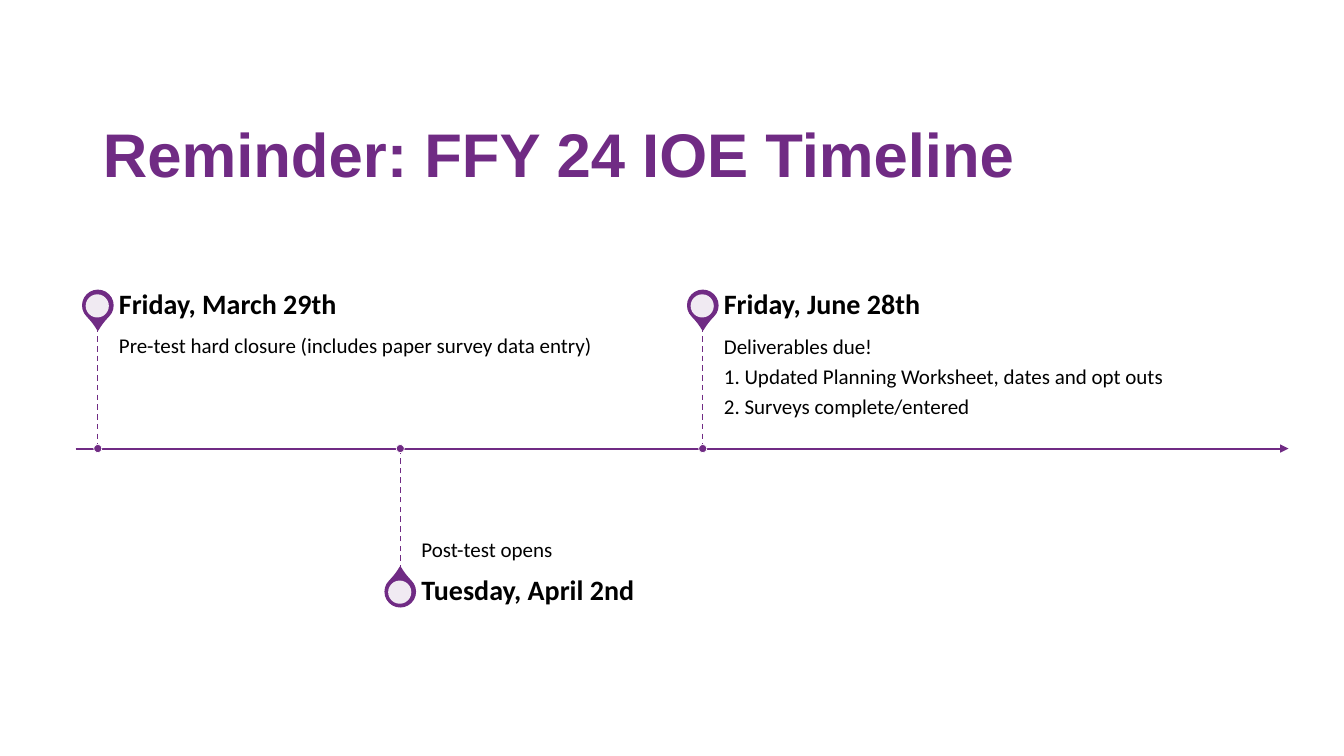
from lxml.etree import SubElement
from pptx import Presentation
from pptx.dml.color import RGBColor
from pptx.enum.dml import MSO_LINE
from pptx.enum.shapes import MSO_CONNECTOR, MSO_SHAPE
from pptx.enum.text import MSO_ANCHOR, PP_ALIGN
from pptx.oxml.ns import qn
from pptx.util import Emu, Pt

EMU_PER_PX = 9144
COLORS = {"purple": "702B84", "white": "FFFFFF", "black": "000000"}
HEADING_HEIGHT = 42
BODY_HEIGHT = 121
TEXT_WIDTH = 500
EVENTS = [
    ("Friday, March 29th", ["Pre-test hard closure (includes paper survey data entry)"], True),
    ("Tuesday, April 2nd", ["Post-test opens"], False),
    ("Friday, June 28th", [
        "Deliverables due!",
        "1. Updated Planning Worksheet, dates and opt outs",
        "2. Surveys complete/entered",
    ], True),
]


def px(*lengths):
    return [Emu(length * EMU_PER_PX) for length in lengths]


def color(name):
    return RGBColor.from_string(COLORS[name])


def add_run(paragraph, text, font_name, size, color_name, bold):
    run = paragraph.add_run()
    run.text = text
    run.font.name = font_name
    run.font.size = Pt(size)
    run.font.bold = bold
    run.font.color.rgb = color(color_name)


def add_text(slide, box, lines, size, bold, anchor, insets):
    frame = slide.shapes.add_textbox(*px(*box)).text_frame
    frame.word_wrap = True
    frame.vertical_anchor = anchor
    (frame.margin_left, frame.margin_top,
     frame.margin_right, frame.margin_bottom) = px(*insets)
    for index, line in enumerate(lines):
        paragraph = frame.add_paragraph() if index else frame.paragraphs[0]
        paragraph.line_spacing = 0.9
        paragraph.space_after = Pt(5)
        add_run(paragraph, line, "Calibri", size, "black", bold)


def add_solid(slide, kind, box, fill, line=None, width=1):
    shape = slide.shapes.add_shape(kind, *px(*box))
    shape.shadow.inherit = False
    shape.fill.solid()
    shape.fill.fore_color.rgb = color(fill)
    if line:
        shape.line.color.rgb = color(line)
        shape.line.width = Pt(width)
    else:
        shape.line.fill.background()
    return shape


def add_line(slide, ends, width):
    connector = slide.shapes.add_connector(MSO_CONNECTOR.STRAIGHT, *px(*ends))
    connector.line.color.rgb = color("purple")
    connector.line.width = Pt(width)
    SubElement(connector._element.spPr, qn("a:effectLst"))
    return connector


def add_title(slide, box, text):
    title = slide.shapes.title
    title.left, title.top, title.width, title.height = px(*box)
    title.text_frame.vertical_anchor = MSO_ANCHOR.MIDDLE
    paragraph = title.text_frame.paragraphs[0]
    paragraph.alignment = PP_ALIGN.LEFT
    paragraph.line_spacing = 0.9
    add_run(paragraph, text, "Arial", 44, "purple", True)


def add_pin(slide, left, top, rotation):
    drop = add_solid(slide, MSO_SHAPE.TEAR, (left, top, 30, 30), "purple", "purple")
    drop.adjustments[0] = 1.15
    drop.rotation = rotation
    hole = add_solid(slide, MSO_SHAPE.OVAL, (left + 3, top + 4, 23, 23), "white")
    fill = hole._element.spPr.find(qn("a:solidFill"))
    SubElement(fill[0], qn("a:alpha"), val="90000")


def add_event(slide, left, axis, heading, lines, above):
    if above:
        body_top = axis - BODY_HEIGHT
        heading_top = body_top - HEADING_HEIGHT
        stem_end, rotation = body_top, 135
        anchor, insets = MSO_ANCHOR.TOP, (0, 10, 10, 16)
    else:
        body_top = axis
        heading_top = stem_end = axis + BODY_HEIGHT
        rotation = 315
        anchor, insets = MSO_ANCHOR.BOTTOM, (0, 16, 0, 10)
    center, text_left = left + 15, left + 36
    add_pin(slide, left, heading_top + 6, rotation)
    add_text(slide, (text_left, body_top, TEXT_WIDTH, BODY_HEIGHT),
             lines, 15, False, anchor, insets)
    add_text(slide, (text_left, heading_top, TEXT_WIDTH, HEADING_HEIGHT),
             [heading], 20, True, MSO_ANCHOR.MIDDLE, (0, 0, 14, 0))
    stem = add_line(slide, (center, stem_end, center, axis), 1)
    stem.line.dash_style = MSO_LINE.DASH
    add_solid(slide, MSO_SHAPE.OVAL, (center - 4, axis - 4, 8, 8), "purple", "white", 0.5)


def add_timeline(slide, left, axis, width):
    arrow = add_line(slide, (left, axis, left + width, axis), 1.5)
    SubElement(arrow.line._get_or_add_ln(), qn("a:tailEnd"), type="triangle")
    for index, (heading, lines, above) in enumerate(EVENTS):
        add_event(slide, left + 7 + 300 * index, axis, heading, lines, above)


def main():
    presentation = Presentation()
    presentation.slide_width, presentation.slide_height = px(1333, 750)
    slide = presentation.slides.add_slide(presentation.slide_layouts[5])
    add_title(slide, (92, 84, 1150, 145), "Reminder: FFY 24 IOE Timeline")
    add_timeline(slide, 75, 445, 1203)
    presentation.save("out.pptx")


if __name__ == "__main__":
    main()
